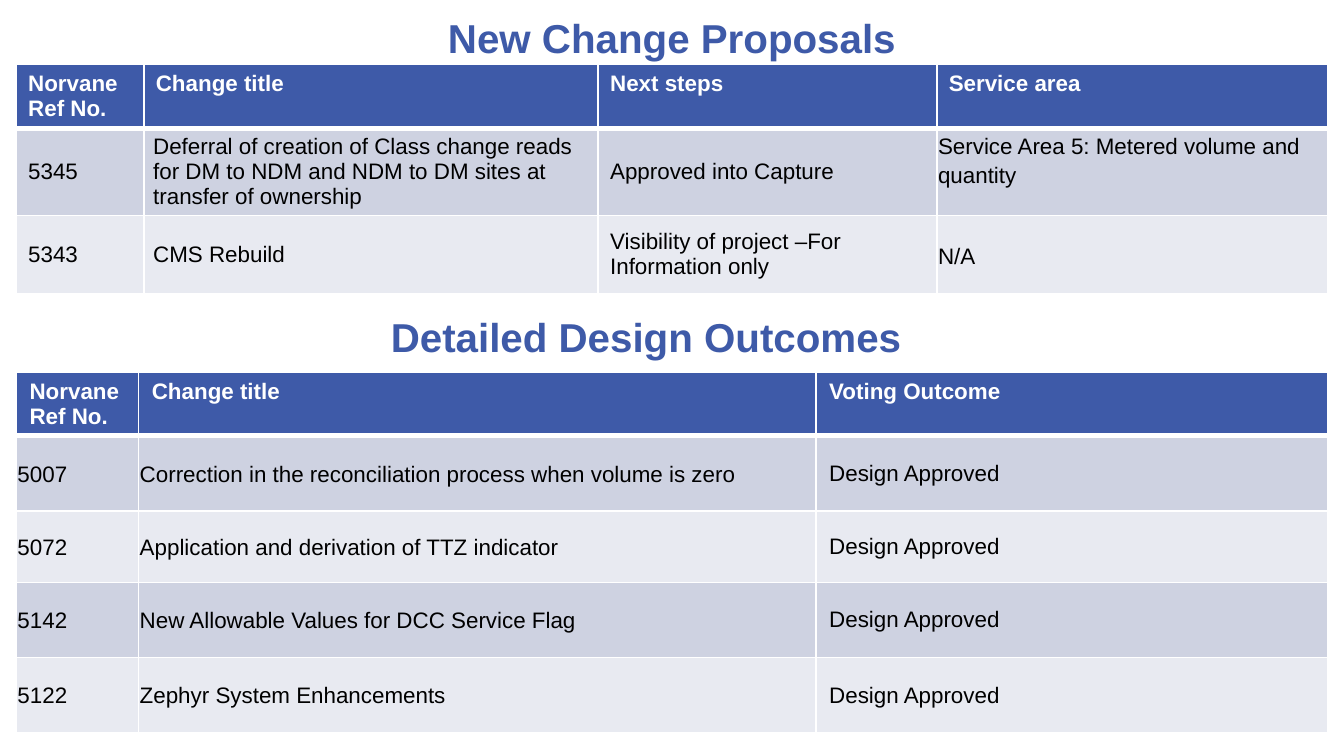
from lxml import etree
from pptx import Presentation
from pptx.dml.color import RGBColor
from pptx.enum.text import MSO_ANCHOR, MSO_AUTO_SIZE, PP_ALIGN
from pptx.oxml.ns import qn
from pptx.util import Inches, Pt

TOP, MIDDLE = MSO_ANCHOR.TOP, MSO_ANCHOR.MIDDLE
CENTER = PP_ALIGN.CENTER
NO_AUTOFIT = MSO_AUTO_SIZE.NONE

BLUE = RGBColor(0x3E, 0x5A, 0xA8)
BAND_DARK = RGBColor(0xCE, 0xD2, 0xE1)
BAND_LIGHT = RGBColor(0xE8, 0xEA, 0xF1)
WHITE = RGBColor(0xFF, 0xFF, 0xFF)
BLACK = RGBColor(0, 0, 0)

HEADING_FONT = {"name": "Arial", "size": Pt(21.6), "bold": True}
HEADER_FONT = {"name": "Arial", "size": Pt(12), "bold": True}
BODY_FONT = {"name": "Arial", "size": Pt(12), "bold": False}

# Cell margins: left, top, right, bottom
NORMAL = (0.09, 0.05, 0.09, 0.05)
WIDE = (0.1, 0.05, 0.1, 0.05)
SIDES_ONLY = (0.07, 0, 0.07, 0)
TIGHT = (0.01, 0.01, 0.01, 0)
RAISED = (0.01, 0.01, 0.01, 0.2)

TABLE_LEFT = 0.12
THIN, THICK = 1, 3

PROPOSALS = [
    ("Norvane Ref No.", "Change title", "Next steps", "Service area"),
    ("5345",
     "Deferral of creation of Class change reads for DM to NDM and NDM to DM "
     "sites at transfer of ownership",
     "Approved into Capture", "Service Area 5: Metered volume and quantity"),
    ("5343", "CMS Rebuild", "Visibility of project –For Information only", "N/A"),
]
PROPOSAL_MARGINS = [
    (NORMAL,) * 4,
    (NORMAL, SIDES_ONLY, NORMAL, RAISED),
    (NORMAL, SIDES_ONLY, NORMAL, TIGHT),
]

OUTCOMES = [("Norvane Ref No.", "Change title", "Voting Outcome")] + [
    (ref, title, "Design Approved") for ref, title in (
        ("5007", "Correction in the reconciliation process when volume is zero"),
        ("5072", "Application and derivation of TTZ indicator"),
        ("5142", "New Allowable Values for DCC Service Flag"),
        ("5122", "Zephyr System Enhancements"),
    )
]
OUTCOME_MARGINS = [(WIDE,) * 3] + [(TIGHT, TIGHT, WIDE)] * 4


def apply_font(font, style, color):
    for attribute, value in style.items():
        setattr(font, attribute, value)
    font.color.rgb = color


def write_heading(heading, text, left, top):
    heading.left, heading.top = Inches(left), Inches(top)
    heading.width, heading.height = Inches(9), Inches(0.39)
    frame = heading.text_frame
    frame.text = text
    frame.word_wrap = True
    frame.auto_size = NO_AUTOFIT
    frame.vertical_anchor = MIDDLE
    paragraph = frame.paragraphs[0]
    paragraph.alignment = CENTER
    apply_font(paragraph.runs[0].font, HEADING_FONT, BLUE)


def add_borders(cell, top, bottom):
    properties = cell._tc.get_or_add_tcPr()
    for side, width in (("L", THIN), ("R", THIN), ("T", top), ("B", bottom)):
        line = etree.SubElement(properties, qn(f"a:ln{side}"), w=str(Pt(width)))
        fill = etree.SubElement(line, qn("a:solidFill"))
        etree.SubElement(fill, qn("a:srgbClr"), val=str(WHITE))


def format_cell(cell, text, row, margins, spacing):
    is_header = row == 0
    # Borders come before the fill in the cell properties
    add_borders(cell, THICK if row == 1 else THIN, THICK if is_header else THIN)
    cell.fill.solid()
    cell.fill.fore_color.rgb = (
        BLUE if is_header else BAND_DARK if row % 2 else BAND_LIGHT)
    cell.vertical_anchor = TOP if is_header else MIDDLE
    for side, margin in zip(("left", "top", "right", "bottom"), margins):
        setattr(cell, f"margin_{side}", Inches(margin))
    cell.text = text
    paragraph = cell.text_frame.paragraphs[0]
    if spacing and not is_header:
        paragraph.line_spacing = spacing
    apply_font(paragraph.runs[0].font,
               HEADER_FONT if is_header else BODY_FONT,
               WHITE if is_header else BLACK)


def add_change_table(slide, content, top, widths, heights, margins, spacings):
    table = slide.shapes.add_table(
        len(heights), len(widths), Inches(TABLE_LEFT), Inches(top),
        Inches(sum(widths)), Inches(sum(heights))).table
    for column, width in zip(table.columns, widths):
        column.width = Inches(width)
    for row, height in zip(table.rows, heights):
        row.height = Inches(height)
    for row, texts in enumerate(content):
        for column, text in enumerate(texts):
            format_cell(table.cell(row, column), text, row,
                        margins[row][column], spacings[column])


def main():
    presentation = Presentation()
    # Widescreen, 16:9
    presentation.slide_width = Inches(10)
    presentation.slide_height = Inches(10) * 9 // 16
    slide = presentation.slides.add_slide(presentation.slide_layouts[5])

    # New proposals
    write_heading(slide.shapes.title, "New Change Proposals", 0.5, 0.08)
    add_change_table(slide, PROPOSALS, 0.48, (0.95, 3.38, 2.52, 2.91),
                     (0.46, 0.65, 0.58), PROPOSAL_MARGINS,
                     (None, None, None, 1.15))

    # Design outcomes
    outcomes_heading = slide.shapes.add_textbox(0, 0, 0, 0)
    write_heading(outcomes_heading, "Detailed Design Outcomes ", 0.35, 2.31)
    add_change_table(slide, OUTCOMES, 2.77, (0.91, 5.04, 3.81),
                     (0.47, 0.56, 0.53, 0.56, 0.56), OUTCOME_MARGINS,
                     (None, None, None))

    presentation.save("out.pptx")


if __name__ == "__main__":
    main()
